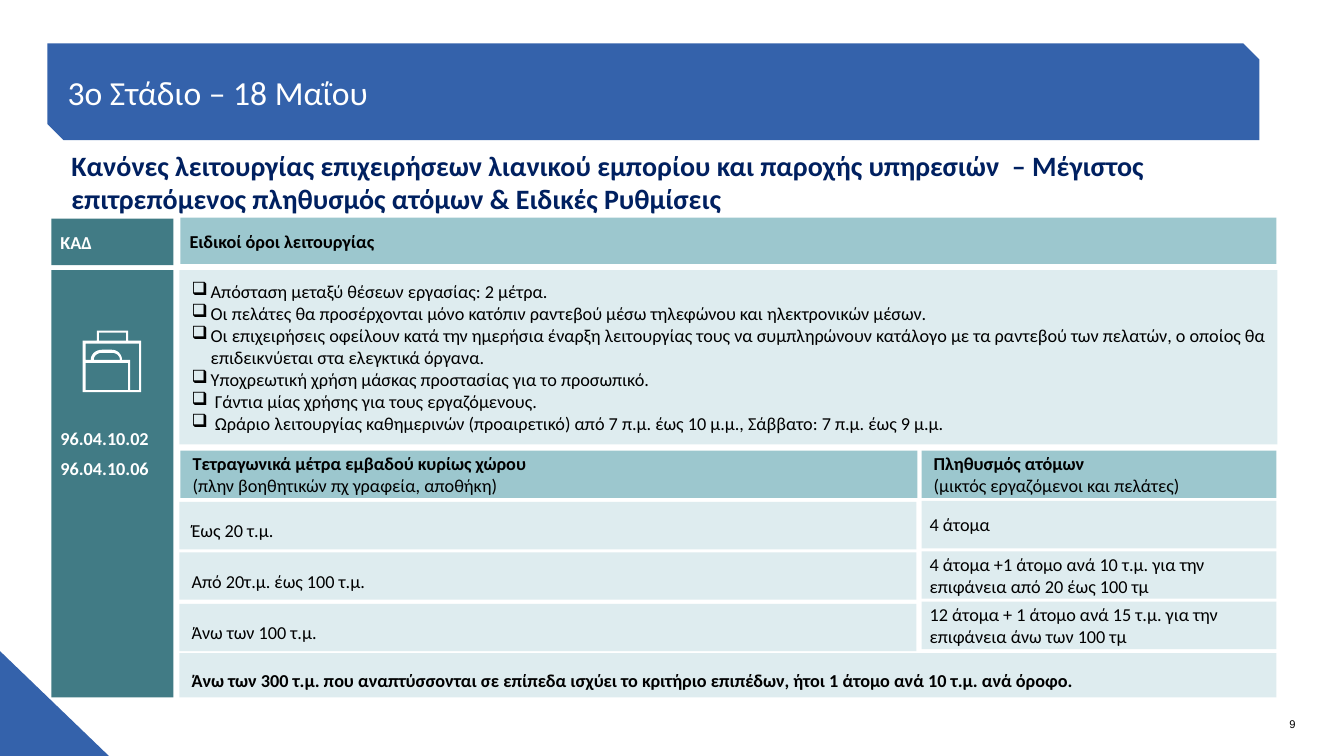
"""Build the slide of operating rules for stage three, 18 May."""
from dataclasses import dataclass
from math import cos, pi, sin

from lxml.etree import SubElement
from pptx import Presentation
from pptx.dml.color import RGBColor as RGB
from pptx.enum.shapes import MSO_SHAPE as Kind
from pptx.enum.text import MSO_ANCHOR as Anchor, PP_ALIGN as Align
from pptx.oxml.ns import qn
from pptx.util import Emu, Pt

SCALE = 9144


@dataclass(frozen=True)
class Theme:
    """Colours, fonts and type sizes."""
    blue: str = "3462AB"
    navy: str = "002060"
    teal: str = "417B85"
    aqua: str = "9CC7CE"
    pale: str = "DEECEF"
    white: str = "FFFFFF"
    black: str = "000000"
    face: str = "Calibri"
    plain: str = "Arial"
    title: int = 24
    lead: int = 20
    body: int = 13
    note: int = 8


THEME = Theme()
BODY = dict(name=THEME.face, size=Pt(THEME.body), bold=False)
BOLD = {**BODY, "bold": True}
TITLE = {**BODY, "size": Pt(THEME.title)}
LEAD = {**BOLD, "size": Pt(THEME.lead)}
NOTE = dict(name=THEME.plain, size=Pt(THEME.note))

LABEL = (9, 6, 6, 6)
HEAD = (12, 0, 8, 0)
CODE = (9, 6, 6, 67)
ROW = (12, 16, 8, 6)
SIDE = (8, 0, 0, 0)

RULES = [
    "Απόσταση μεταξύ θέσεων εργασίας: 2 μέτρα.",
    "Οι πελάτες θα προσέρχονται μόνο κατόπιν ραντεβού μέσω τηλεφώνου και ηλεκτρονικών μέσων.",
    "Οι επιχειρήσεις οφείλουν κατά την ημερήσια έναρξη λειτουργίας τους να συμπληρώνουν "
    "κατάλογο με τα ραντεβού των πελατών, ο οποίος θα επιδεικνύεται στα ελεγκτικά όργανα.",
    "Υποχρεωτική χρήση μάσκας προστασίας για το προσωπικό.",
    " Γάντια μίας χρήσης για τους εργαζόμενους.",
    " Ωράριο λειτουργίας καθημερινών (προαιρετικό) από 7 π.μ. έως 10 μ.μ., "
    "Σάββατο: 7 π.μ. έως 9 μ.μ.",
]
LIMITS = [
    ("Έως 20 τ.μ.", "4 άτομα"),
    ("Από 20τ.μ. έως 100 τ.μ.",
     "4 άτομα +1 άτομο ανά 10 τ.μ. για την επιφάνεια από 20 έως 100 τμ"),
    ("Άνω των 100 τ.μ.",
     "12 άτομα + 1 άτομο ανά 15 τ.μ. για την επιφάνεια άνω των 100 τμ"),
]


def px(size):
    """Turn px into EMU."""
    return Emu(round(size * SCALE))


def apply(item, form):
    """Set each format value on an item."""
    for key, value in form.items():
        setattr(item, key, value)


def paint(shape, fill):
    """Give a shape a flat fill with no line or shadow."""
    shape.shadow.inherit = False
    shape.fill.solid()
    shape.fill.fore_color.rgb = RGB.from_string(fill)
    shape.line.fill.background()


def write(shape, lines, color, pad, anchor=Anchor.MIDDLE, align=Align.LEFT, after=0):
    """Fill a shape with lines, each a pair of text and font format."""
    frame = shape.text_frame
    sides = ("margin_left", "margin_top", "margin_right", "margin_bottom")
    apply(frame, dict(zip(sides, map(px, pad))))
    apply(frame, dict(word_wrap=True, vertical_anchor=anchor))
    for index, (text, form) in enumerate(lines):
        para = frame.add_paragraph() if index else frame.paragraphs[0]
        apply(para, dict(alignment=align, space_after=Pt(after)))
        run = para.add_run()
        run.text = text
        apply(run.font, form)
        run.font.color.rgb = RGB.from_string(color)


def block(slide, at, fill, kind=Kind.RECTANGLE):
    """Add a flat preset shape."""
    shape = slide.shapes.add_shape(kind, *map(px, at))
    paint(shape, fill)
    return shape


def cell(slide, at, fill, lines, pad, color=THEME.black, **more):
    """Add a filled block with text."""
    shape = block(slide, at, fill)
    write(shape, lines, color, pad, **more)
    return shape


def label(slide, at, lines, color, pad, **more):
    """Add a text box."""
    write(slide.shapes.add_textbox(*map(px, at)), lines, color, pad, **more)


def bullet(shape, mark, indent):
    """Give each paragraph of a shape a hanging bullet."""
    for para in shape.text_frame.paragraphs:
        props = para._p.get_or_add_pPr()
        props.set("marL", str(px(indent)))
        props.set("indent", str(px(-indent)))
        SubElement(props, qn("a:buChar")).set("char", mark)


def rect(left, top, right, base):
    """List the corners of a rectangle."""
    return [(left, top), (right, top), (right, base), (left, base)]


def bow(left, right, top, base, flat=(101, 111), steps=8):
    """List the points of a flat-topped arch from left to right."""
    turns = [step * pi / 2 / steps for step in range(steps + 1)]
    rise = [(flat[0] - (flat[0] - left) * cos(t), base - (base - top) * sin(t)) for t in turns]
    fall = [(flat[1] + (right - flat[1]) * sin(t), base - (base - top) * cos(t)) for t in turns]
    return rise + fall


def icon(slide):
    """Draw the bag icon as one outline with holes."""
    rings = [
        [(127, 338), (127, 328), (96, 328), (96, 338), (82, 338),
         (82, 389), (140, 389), (140, 338)],
        rect(98, 330, 125, 338),
        rect(85, 360, 127, 387),
        bow(93, 119, 350, 357),
        [(85, 341), (138, 341), (138, 387), (129, 387), (129, 357),
         *reversed(bow(90, 121, 347, 357)), (85, 357)],
    ]
    rings = [[(px(x), px(y)) for x, y in ring] for ring in rings]
    pen = slide.shapes.build_freeform(*rings[0][0], scale=1.0)
    for index, ring in enumerate(rings):
        if index:
            pen.move_to(*ring[0])
        pen.add_line_segments(ring[1:], close=True)
    paint(pen.convert_to_shape(), THEME.white)


def main():
    """Build and save the slide."""
    deck = Presentation()
    apply(deck, dict(slide_width=px(1333), slide_height=px(750)))
    slide = deck.slides.add_slide(deck.slide_layouts[6])

    block(slide, (0, 646, 108, 104), THEME.blue, Kind.RIGHT_TRIANGLE)
    label(slide, (1092, 710, 193, 15), [("9", NOTE)], THEME.black, (0, 0, 0, 0),
          anchor=Anchor.BOTTOM, align=Align.RIGHT)
    band = block(slide, (47, 43, 1202, 96), THEME.blue, Kind.SNIP_2_DIAG_RECTANGLE)
    write(band, [("3o Στάδιο – 18 Μαΐου", TITLE)], THEME.white, (12, 2, 12, 2))
    label(slide, (61, 142, 1173, 77),
          [("Κανόνες λειτουργίας επιχειρήσεων λιανικού εμπορίου και παροχής υπηρεσιών  – "
            "Μέγιστος επιτρεπόμενος πληθυσμός ατόμων & Ειδικές Ρυθμίσεις", LEAD)],
          THEME.navy, (10, 5, 10, 5), anchor=Anchor.TOP)

    cell(slide, (51, 217, 121, 46), THEME.teal, [("ΚΑΔ", BOLD)], LABEL, THEME.white)
    cell(slide, (51, 268, 121, 424), THEME.teal,
         [("96.04.10.02", BOLD), ("96.04.10.06", BOLD)], CODE, THEME.white, after=6)
    icon(slide)

    cell(slide, (179, 216, 1087, 46), THEME.aqua, [("Ειδικοί όροι λειτουργίας", BOLD)], LABEL)
    rules = cell(slide, (178, 268, 1089, 173), THEME.pale, [(rule, BODY) for rule in RULES], HEAD)
    bullet(rules, "❑", 19)

    cell(slide, (179, 447, 731, 47), THEME.aqua,
         [("Τετραγωνικά μέτρα εμβαδού κυρίως χώρου", BOLD),
          ("(πλην βοηθητικών πχ γραφεία, αποθήκη)", BODY)], HEAD)
    cell(slide, (914, 447, 352, 47), THEME.aqua,
         [("Πληθυσμός ατόμων", BOLD), ("(μικτός εργαζόμενοι και πελάτες)", BODY)], HEAD)
    for index, (area, crowd) in enumerate(LIMITS):
        cell(slide, (178, 498 + 101 * index // 2, 731, 47), THEME.pale, [(area, BODY)], ROW)
        cell(slide, (914, 497 + 50 * index, 352, 47), THEME.pale, [(crowd, BODY)], SIDE)
    cell(slide, (178, 648, 1088, 44), THEME.pale,
         [("Άνω των 300 τ.μ. που αναπτύσσονται σε επίπεδα ισχύει το κριτήριο επιπέδων, "
           "ήτοι 1 άτομο ανά 10 τ.μ. ανά όροφο.", BOLD)], ROW)
    deck.save("out.pptx")


if __name__ == "__main__":
    main()
